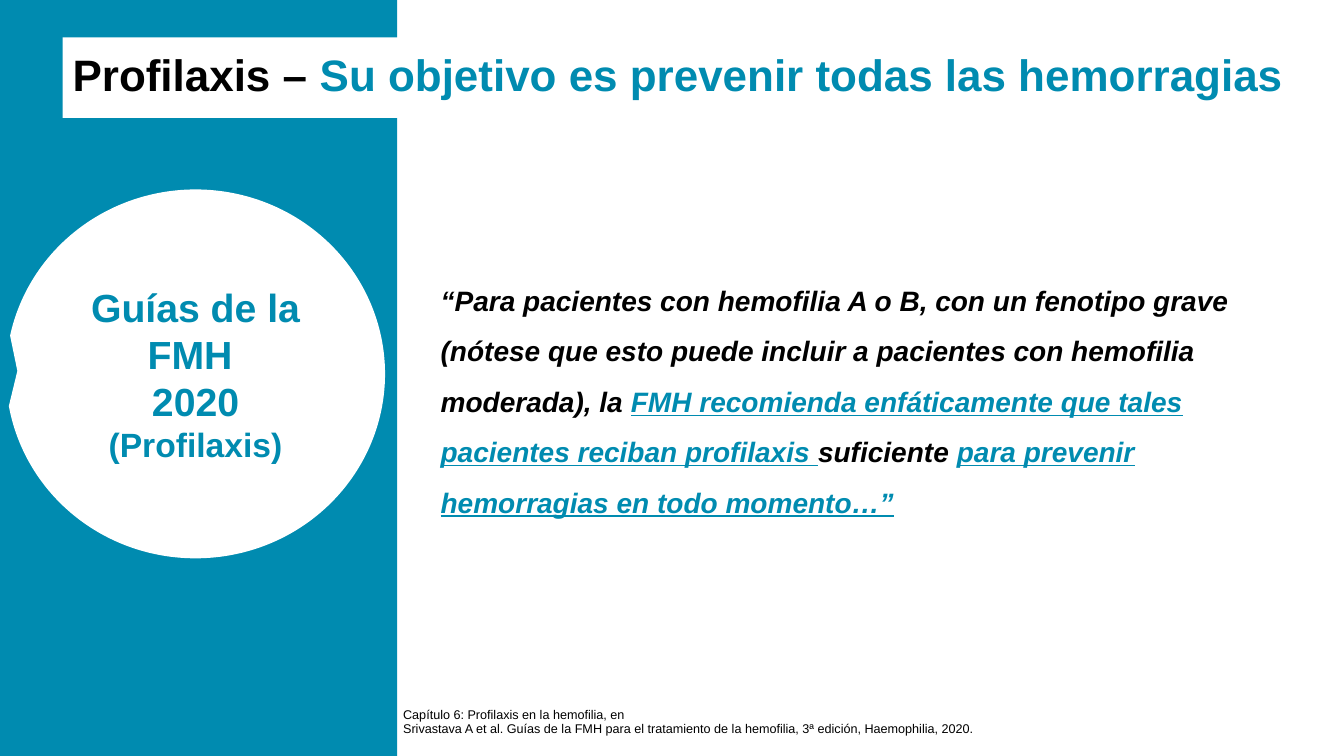
from dataclasses import dataclass

from lxml import etree
from pptx import Presentation
from pptx.dml.color import RGBColor
from pptx.enum import shapes, text
from pptx.oxml import ns
from pptx.util import Inches, Pt


@dataclass(frozen=True)
class Theme:
    font: str = "Arial"
    teal: RGBColor = RGBColor(0x00, 0x8B, 0xB0)
    black: RGBColor = RGBColor(0, 0, 0)
    white: RGBColor = RGBColor(255, 255, 255)
    title: float = 31.4
    callout: float = 28
    callout_small: float = 24
    quote: float = 20
    source: float = 9


THEME = Theme()


def place(shape, box):
    shape.left, shape.top, shape.width, shape.height = (Inches(v) for v in box)


def add_run(paragraph, words, size, color, bold=True, italic=False, underline=False):
    run = paragraph.add_run()
    run.text = words
    font = run.font
    font.name, font.size = THEME.font, Pt(size)
    font.bold, font.italic, font.underline = bold, italic, underline
    font.color.rgb = color


def prepare_frame(shape, anchor):
    frame = shape.text_frame
    frame.word_wrap = True
    frame.auto_size = text.MSO_AUTO_SIZE.NONE
    frame.vertical_anchor = anchor
    return frame


def add_filled_shape(slide, kind, box, color):
    shape = slide.shapes.add_shape(kind, *(Inches(v) for v in box))
    shape.shadow.inherit = False
    shape.fill.solid()
    shape.fill.fore_color.rgb = color
    shape.line.fill.background()
    return shape


def add_side_panel(slide, box):
    """Draw the teal panel behind the placeholders."""
    panel = add_filled_shape(slide, shapes.MSO_SHAPE.RECTANGLE, box, THEME.teal)
    slide.shapes.title._element.addprevious(panel._element)


def fill_title(slide, box):
    title = slide.shapes.title
    place(title, box)
    title.fill.solid()
    title.fill.fore_color.rgb = THEME.white
    heading = prepare_frame(title, text.MSO_ANCHOR.MIDDLE).paragraphs[0]
    heading.alignment = text.PP_ALIGN.LEFT
    heading.line_spacing = 0.9
    add_run(heading, "Profilaxis – ", THEME.title, THEME.black)
    add_run(heading, "Su objetivo es prevenir todas las hemorragias", THEME.title, THEME.teal)


def fill_quote(slide, box):
    body = slide.placeholders[1]
    place(body, box)
    quote = prepare_frame(body, text.MSO_ANCHOR.MIDDLE).paragraphs[0]
    properties = quote._p.get_or_add_pPr()
    properties.set("marL", "0")
    properties.set("indent", "0")
    etree.SubElement(properties, ns.qn("a:buNone"))
    quote.alignment = text.PP_ALIGN.LEFT
    quote.line_spacing = 1.5
    quote.space_before, quote.space_after = Pt(0), Pt(6)
    passages = [
        ("“Para pacientes con hemofilia A o B, con un fenotipo grave (nótese que esto "
         "puede incluir a pacientes con hemofilia moderada), la ", False),
        ("FMH recomienda enfáticamente que tales pacientes reciban profilaxis ", True),
        ("suficiente ", False),
        ("para prevenir hemorragias en todo momento…”", True),
    ]
    for words, stressed in passages:
        color = THEME.teal if stressed else THEME.black
        add_run(quote, words, THEME.quote, color, italic=True, underline=stressed)


def add_guide_callout(slide, box):
    callout = add_filled_shape(slide, shapes.MSO_SHAPE.OVAL_CALLOUT, box, THEME.white)
    callout.adjustments[0], callout.adjustments[1] = -0.47, -0.008
    frame = prepare_frame(callout, text.MSO_ANCHOR.MIDDLE)
    lines = [("Guías de la FMH ", THEME.callout), ("2020", THEME.callout),
             ("(Profilaxis)", THEME.callout_small)]
    for i, (words, size) in enumerate(lines):
        line = frame.add_paragraph() if i else frame.paragraphs[0]
        line.alignment = text.PP_ALIGN.CENTER
        add_run(line, words, size, THEME.teal)


def add_source(slide, box):
    source = slide.shapes.add_textbox(*(Inches(v) for v in box))
    frame = prepare_frame(source, text.MSO_ANCHOR.BOTTOM)
    frame.margin_bottom = 0
    lines = ["Capítulo 6: Profilaxis en la hemofilia, en",
             "Srivastava A et al. Guías de la FMH para el tratamiento de la hemofilia, "
             "3ª edición, Haemophilia, 2020."]
    for i, words in enumerate(lines):
        line = frame.add_paragraph() if i else frame.paragraphs[0]
        line.line_spacing = 0.9
        add_run(line, words, THEME.source, THEME.black, bold=False)


def build_guideline_slide(deck):
    slide = deck.slides.add_slide(deck.slide_layouts[1])
    slide.background.fill.solid()
    slide.background.fill.fore_color.rgb = THEME.white
    add_side_panel(slide, (0, 0, 3.94, 7.5))
    fill_title(slide, (0.62, 0.37, 12.71, 0.8))
    fill_quote(slide, (4.27, 1.31, 8.41, 5.17))
    add_guide_callout(slide, (0.06, 1.88, 3.76, 3.66))
    add_source(slide, (3.9, 6.93, 6.88, 0.37))


def main():
    deck = Presentation()
    deck.slide_width, deck.slide_height = Inches(13.33), Inches(7.5)
    build_guideline_slide(deck)
    deck.save("out.pptx")


if __name__ == "__main__":
    main()
